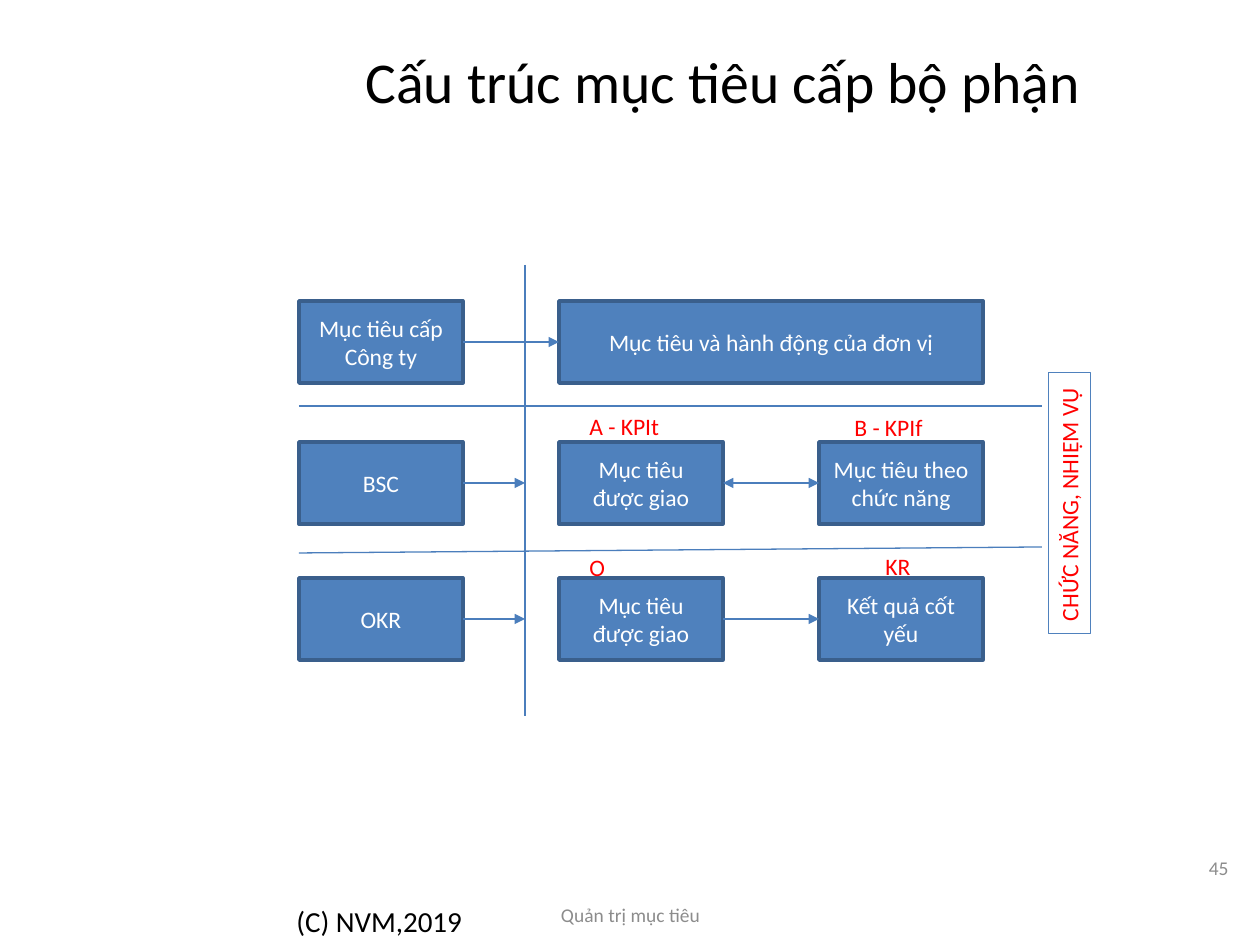
from lxml import etree
from pptx import Presentation
from pptx import util as u
from pptx.dml.color import RGBColor
from pptx.enum import shapes, text
from pptx.oxml.ns import qn

PX = 914400 / 126
BLUE = RGBColor(0x4F, 0x81, 0xBD)
EDGE = RGBColor(0x3A, 0x5F, 0x8C)
RULE = RGBColor(0x4B, 0x7E, 0xBC)
RED = RGBColor(0xFF, 0x00, 0x00)
GRAY = RGBColor(0x8C, 0x8C, 0x8C)
BLACK = RGBColor(0x00, 0x00, 0x00)
WHITE = RGBColor(0xFF, 0xFF, 0xFF)
LEFT, CENTER, RIGHT = text.PP_ALIGN.LEFT, text.PP_ALIGN.CENTER, text.PP_ALIGN.RIGHT
TOP, MIDDLE = text.MSO_ANCHOR.TOP, text.MSO_ANCHOR.MIDDLE

prs = Presentation()
prs.slide_width, prs.slide_height = u.Inches(10), u.Inches(7.5)
s = prs.slides.add_slide(prs.slide_layouts[6])


def add_text(words, x, y, w, h, size=13.5, color=RED, align=LEFT, anchor=TOP,
             wrap=True, fill=None, line=None, line_width=0.75):
    """Add a text box, or a rectangle when a line colour is given."""
    box = [u.Emu(round(v * PX)) for v in (x, y, w, h)]
    if line is None:
        sp = s.shapes.add_textbox(*box)
    else:
        sp = s.shapes.add_shape(shapes.MSO_SHAPE.RECTANGLE, *box)
        sp.shadow.inherit = False
        sp.line.color.rgb = line
        sp.line.width = u.Pt(line_width)
        if fill is None:
            sp.fill.background()
        else:
            sp.fill.solid()
            sp.fill.fore_color.rgb = fill
    tf = sp.text_frame
    tf.word_wrap = wrap
    tf.vertical_anchor = anchor
    p = tf.paragraphs[0]
    p.alignment = align
    r = p.add_run()
    r.text = words
    r.font.name, r.font.size = "Calibri", u.Pt(size)
    r.font.color.rgb = color
    return sp


def add_line(x1, y1, x2, y2, begin=None, end=None, arrows=()):
    """Join begin's right side to end's left side where boxes are given."""
    c = s.shapes.add_connector(shapes.MSO_CONNECTOR.STRAIGHT,
                               *[u.Emu(round(v * PX)) for v in (x1, y1, x2, y2)])
    if begin is not None:
        c.begin_connect(begin, 3)
    if end is not None:
        c.end_connect(end, 1)
    c.line.color.rgb = RULE
    c.line.width = u.Pt(0.75)
    for tag in arrows:
        etree.SubElement(c.line._get_or_add_ln(), qn(tag), type="triangle")
    etree.SubElement(c._element.spPr, qn("a:effectLst"))


add_text("Cấu trúc mục tiêu cấp bộ phận", 156, 1, 1134, 158,
         size=33, color=BLACK, align=CENTER, anchor=MIDDLE)
add_text("Quản trị mục tiêu", 431, 890, 399, 50,
         size=11.1, color=GRAY, align=CENTER, anchor=MIDDLE)
add_text("45", 948, 843, 293, 50, size=11.1, color=GRAY, align=RIGHT, anchor=MIDDLE)
add_text("(C) NVM,2019", 284, 897, 294, 50, size=16.6, color=BLACK)

# Grid of boxes: company level, BSC and OKR rows
COLS = (299, 559, 819)
ROWS = (301, 442, 578)
BOX_W, BOX_H = 164, 82
WIDE_W = COLS[2] + BOX_W - COLS[1]
DIVIDER_X = 525
ARROW = ("a:tailEnd",)
BOTH = ("a:headEnd", "a:tailEnd")

boxes = {}
for row, col, words, w in (
    (0, 0, "Mục tiêu cấp Công ty", BOX_W),
    (0, 1, "Mục tiêu và hành động của đơn vị", WIDE_W),
    (1, 0, "BSC", BOX_W),
    (1, 1, "Mục tiêu được giao", BOX_W),
    (1, 2, "Mục tiêu theo chức năng", BOX_W),
    (2, 0, "OKR", BOX_W),
    (2, 1, "Mục tiêu được giao", BOX_W),
    (2, 2, "Kết quả cốt yếu", BOX_W),
):
    boxes[row, col] = add_text(words, COLS[col], ROWS[row], w, BOX_H, color=WHITE,
                               align=CENTER, anchor=MIDDLE, fill=BLUE,
                               line=EDGE, line_width=2)

# Dividers
add_line(DIVIDER_X, 265, DIVIDER_X, 716)
add_line(299, 406, 1042, 406)
add_line(299, 553, 1042, 547)

# Arrows between boxes, and from the row headings to the divider
for row, col, arrows in ((0, 0, ARROW), (1, 1, BOTH), (2, 1, ARROW)):
    y = ROWS[row] + BOX_H // 2
    add_line(COLS[col] + BOX_W, y, COLS[col + 1], y,
             begin=boxes[row, col], end=boxes[row, col + 1], arrows=arrows)
for row in (1, 2):
    y = ROWS[row] + BOX_H // 2
    add_line(COLS[0] + BOX_W, y, DIVIDER_X, y, begin=boxes[row, 0], arrows=ARROW)

for words, x, y, w in (("A - KPIt", 577, 406, 96), ("B - KPIf", 842, 407, 95),
                       ("O", 577, 547, 42), ("KR", 873, 546, 50)):
    add_text(words, x, y, w, 42, wrap=False)

duties = add_text("CHỨC NĂNG, NHIỆM VỤ", 939, 482, 261, 42, wrap=False, line=BLUE)
duties.rotation = 270

prs.save("out.pptx")
